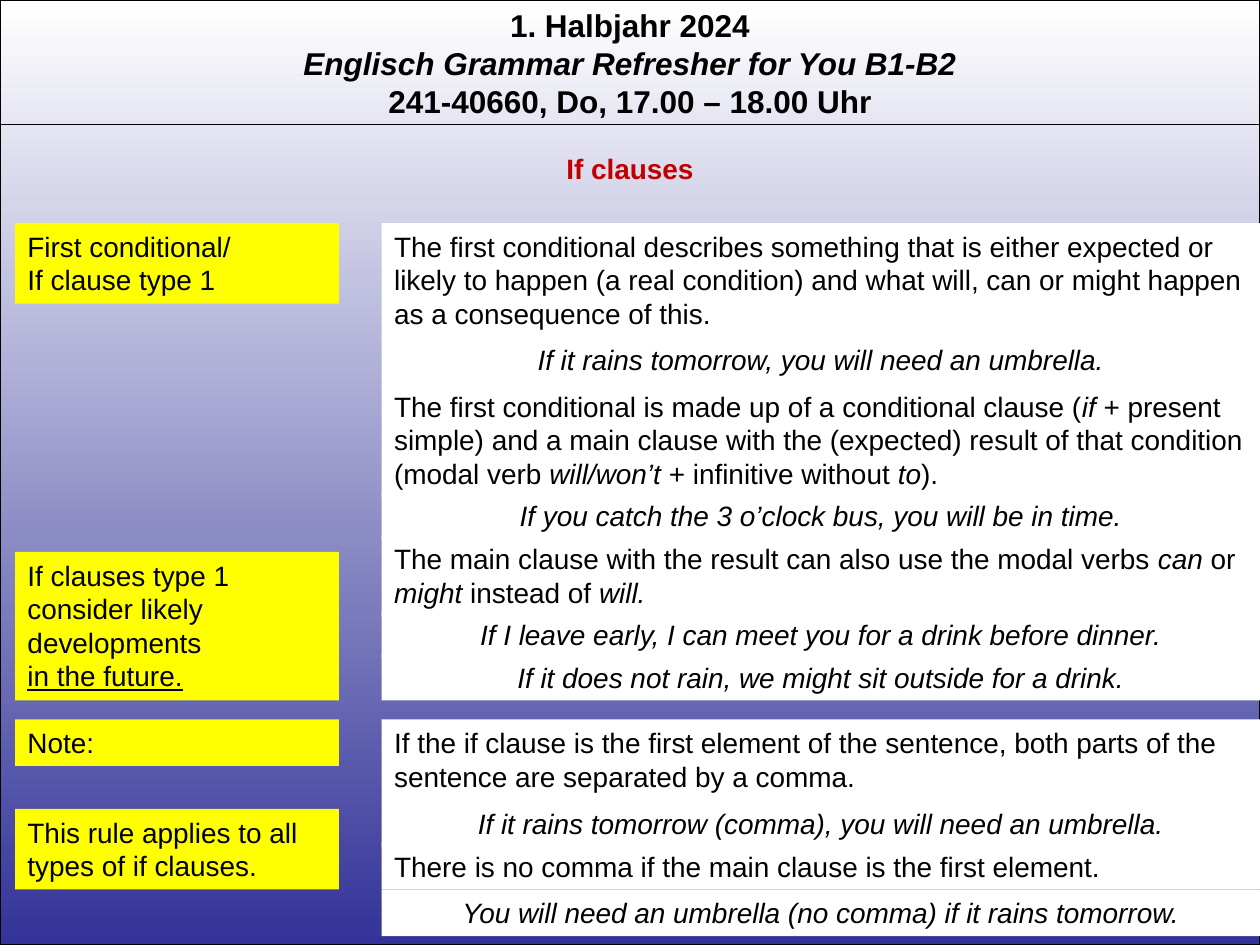
from dataclasses import dataclass

from lxml import etree
from pptx import Presentation
from pptx import util as u
from pptx.dml.color import RGBColor
from pptx.enum import shapes, text
from pptx.oxml.ns import qn


@dataclass(frozen=True)
class Theme:
    font: str = "Arial"
    ink: str = "000000"
    accent: str = "C00000"
    label: str = "FFFF00"
    panel: str = "FFFFFF"
    sky: tuple = ("FFFFFF", "333399")
    header_size: int = 18
    body_size: int = 16
    rule: float = 0.75


COLUMNS, ROWS = 100, 75
LABEL_COLUMN, LABEL_WIDTH = 1.2, 25.7
PANEL_COLUMN = 30.3
PANEL_WIDTH = COLUMNS - PANEL_COLUMN
LEFT, CENTER = text.PP_ALIGN.LEFT, text.PP_ALIGN.CENTER


def box_rows(lines):
    """Height of a body text box: its margins plus its lines."""
    return 1 + 2.7 * lines


def italic(words):
    return words, "italic"


class GrammarSlide:
    def __init__(self, deck, theme):
        self.theme = theme
        self.cell_width = deck.slide_width / COLUMNS
        self.cell_height = deck.slide_height / ROWS
        self.slide = deck.slides.add_slide(deck.slide_layouts[5])

    def place(self, column, row, width, height):
        return (u.Emu(round(column * self.cell_width)), u.Emu(round(row * self.cell_height)),
                u.Emu(round(width * self.cell_width)), u.Emu(round(height * self.cell_height)))

    def set_text(self, frame, paragraphs, align=LEFT, size=None, color=None, bold=False):
        """Each paragraph is a list of runs: plain words, or (words, style)."""
        frame.word_wrap = True
        frame.auto_size = text.MSO_AUTO_SIZE.SHAPE_TO_FIT_TEXT
        frame.vertical_anchor = text.MSO_ANCHOR.TOP
        for index, runs in enumerate(paragraphs):
            paragraph = frame.add_paragraph() if index else frame.paragraphs[0]
            paragraph.alignment = align
            for part in runs:
                words, style = (part, None) if isinstance(part, str) else part
                run = paragraph.add_run()
                run.text = words
                font = run.font
                font.name = self.theme.font
                font.size = u.Pt(size or self.theme.body_size)
                font.bold = bold
                font.italic = style == "italic"
                font.underline = style == "underline"
                font.color.rgb = RGBColor.from_string(color or self.theme.ink)

    def backdrop(self):
        fill = self.slide.background.fill
        fill.gradient()
        fill.gradient_angle = 270
        for stop, color in zip(fill.gradient_stops, self.theme.sky):
            stop.color.rgb = RGBColor.from_string(color)
        border = self.slide.shapes.add_shape(
            shapes.MSO_SHAPE.RECTANGLE, *self.place(0, 0, COLUMNS, ROWS))
        border.shadow.inherit = False
        border.fill.background()
        border.line.color.rgb = RGBColor.from_string(self.theme.ink)
        border.line.width = u.Pt(self.theme.rule)

    def header(self, paragraphs):
        box = self.slide.shapes.add_textbox(*self.place(0, 0, COLUMNS, 10.1))
        self.set_text(box.text_frame, paragraphs, CENTER, self.theme.header_size, bold=True)

    def divider(self, row):
        left, top, width, _ = self.place(0, row, COLUMNS, 0)
        line = self.slide.shapes.add_connector(
            shapes.MSO_CONNECTOR.STRAIGHT, left, top, left + width, top)
        line.line.color.rgb = RGBColor.from_string(self.theme.ink)
        line.line.width = u.Pt(self.theme.rule)
        etree.SubElement(line._element.spPr, qn("a:effectLst"))

    def title(self, words, row):
        title = self.slide.shapes.title
        title.left, title.top, title.width, title.height = self.place(
            0, row, COLUMNS, box_rows(1))
        self.set_text(title.text_frame, [[words]], CENTER, color=self.theme.accent, bold=True)

    def block(self, column, row, width, lines, color, paragraphs, align=LEFT):
        box = self.slide.shapes.add_shape(
            shapes.MSO_SHAPE.RECTANGLE, *self.place(column, row, width, box_rows(lines)))
        box.shadow.inherit = False
        box.fill.solid()
        box.fill.fore_color.rgb = RGBColor.from_string(color)
        box.line.fill.background()
        self.set_text(box.text_frame, paragraphs, align)

    def label(self, row, lines, *paragraphs):
        self.block(LABEL_COLUMN, row, LABEL_WIDTH, lines, self.theme.label, paragraphs)

    def explanation(self, row, lines, *runs):
        self.block(PANEL_COLUMN, row, PANEL_WIDTH, lines, self.theme.panel, [runs])

    def example(self, row, sentence):
        self.block(PANEL_COLUMN, row, PANEL_WIDTH, 1, self.theme.panel,
                   [[italic(sentence)]], CENTER)


def main():
    deck = Presentation()
    deck.slide_width, deck.slide_height = u.Inches(10), u.Inches(7.5)
    page = GrammarSlide(deck, Theme())

    page.backdrop()
    page.header([["1. Halbjahr 2024"],
                 [italic("Englisch Grammar Refresher for You B1-B2")],
                 ["241-40660, Do, 17.00 – 18.00 Uhr"]])
    page.divider(9.9)
    page.title("If clauses", 11.5)

    page.label(17.7, 2, ["First conditional/"], ["If clause type 1"])
    page.label(43.8, 4, ["If clauses type 1 consider likely developments"],
               [("in the future.", "underline")])
    page.label(57.1, 1, ["Note:"])
    page.label(64.2, 2, ["This rule applies to all types of if clauses."])

    examples = [
        (26.7, "If it rains tomorrow, you will need an umbrella."),
        (39.1, "If you catch the 3 o’clock bus, you will be in time."),
        (48.5, "If I leave early, I can meet you for a drink before dinner."),
        (51.9, "If it does not rain, we might sit outside for a drink."),
        (63.5, "If it rains tomorrow (comma), you will need an umbrella."),
        (70.6, "You will need an umbrella (no comma) if it rains tomorrow."),
    ]
    for row, sentence in examples:
        page.example(row, sentence)

    explanations = [
        (17.7, 3, "The first conditional describes something that is either expected or "
                  "likely to happen (a real condition) and what will, can or might happen "
                  "as a consequence of this."),
        (30.4, 3, "The first conditional is made up of a conditional clause (", italic("if "),
         "+ present simple) and a main clause with the (expected) result of that condition "
         "(modal verb ", italic("will/won’t "), "+ infinitive without ", italic("to"), ")."),
        (42.5, 2, "The main clause with the result can also use the modal verbs ",
         italic("can"), " or ", italic("might"), " instead of ", italic("will.")),
        (57.1, 2, "If the if clause is the first element of the sentence, both parts of the "
                  "sentence are separated by a comma."),
        (66.9, 1, "There is no comma if the main clause is the first element."),
    ]
    for row, lines, *runs in explanations:
        page.explanation(row, lines, *runs)

    deck.save("out.pptx")


if __name__ == "__main__":
    main()
